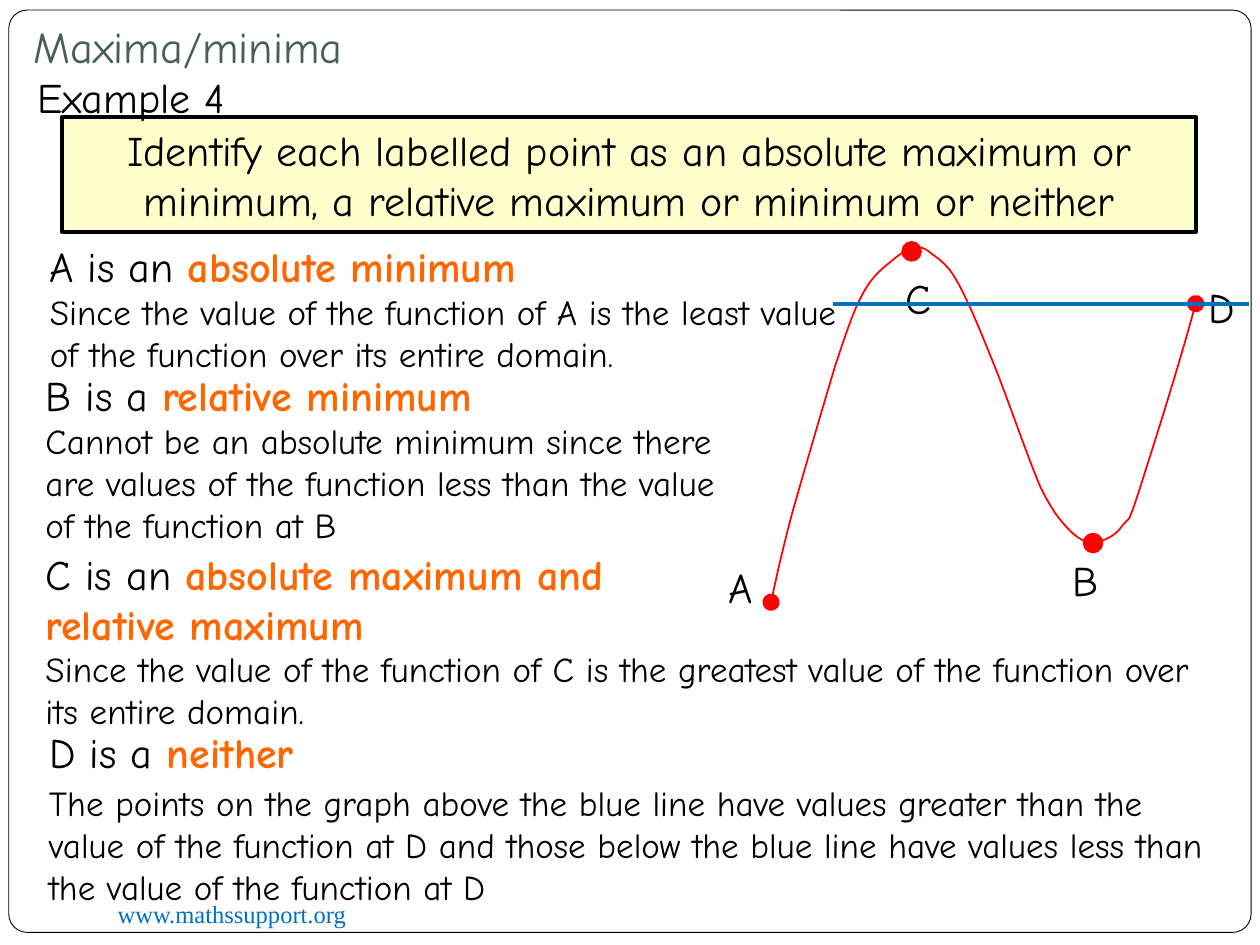
from dataclasses import dataclass

from lxml import etree
from pptx import Presentation
from pptx import util as u
from pptx.dml.color import RGBColor
from pptx.enum import shapes, text
from pptx.oxml import ns

SLIDE_WIDTH, SLIDE_HEIGHT = u.Inches(10), u.Inches(7.5)
COLUMNS, ROWS = 100, 75


@dataclass(frozen=True)
class Theme:
    font: str = "Comic Neue"
    site_font: str = "Times New Roman"
    title_size: float = 25.2
    heading_size: float = 24
    reason_size: float = 20
    site_size: float = 14
    ink: str = "000000"
    paper: str = "FFFFFF"
    title: str = "455F51"
    task: str = "FFFFCC"
    answer: str = "FF6600"
    curve: str = "FF0000"
    level: str = "0070C0"


THEME = Theme()

CONCLUSIONS = [
    ("A is an ", "absolute minimum", (2.95, 18.6, 41.7, 5),
     "Since the value of the function of A is the least value of the function "
     "over its entire domain.", (2.97, 22.55, 65.5, 7.7)),
    ("B is a ", "relative minimum", (2.63, 28.8, 45.8, 5),
     "Cannot be an absolute minimum since there are values of the function "
     "less than the value of the function at B", (2.63, 32.8, 57.6, 11.1)),
    ("C is an ", "absolute maximum and relative maximum", (2.63, 43, 50.5, 9.1),
     "Since the value of the function of C is the greatest value of the function "
     "over its entire domain.", (2.63, 50.9, 94.7, 7.7)),
    ("D is a ", "neither", (2.95, 57.2, 23.4, 5),
     "The points on the graph above the blue line have values greater than the "
     "value of the function at D and those below the blue line have values less "
     "than the value of the function at D", (2.9, 61.5, 94.5, 11.1)),
]

POINT_LABELS = {"A": (56.8, 44.1), "C": (70.9, 21.1), "B": (84.1, 43.5), "D": (94.9, 21.85)}
TURNING_POINTS = [(86.75, 43.1), (72.35, 19.95)]

CURVE_START = (94.9, 24.1)
CURVE_SEGMENTS = [
    ((93.3, 30), (91.3, 36.1), (90.4, 39)),
    ((89.4, 42), (89.7, 40.9), (89.1, 41.7)),
    ((88.5, 42.6), (87.5, 43), (86.8, 43)),
    ((86.1, 43.1), (85.5, 42.7), (84.8, 42)),
    ((84.2, 41.3), (83.7, 40.9), (82.6, 38.7)),
    ((81.6, 36.4), (79.9, 31.4), (78.8, 28.7)),
    ((77.7, 26), (76.8, 23.8), (76, 22.4)),
    ((75.2, 20.9), (74.4, 20.5), (73.9, 20.1)),
    ((73.3, 19.6), (73.1, 19.6), (72.6, 19.7)),
    ((72.1, 19.8), (71.6, 20), (70.9, 20.6)),
    ((70.2, 21.2), (69.4, 21.7), (68.6, 23.1)),
    ((67.8, 24.5), (67.3, 26), (66.3, 29)),
    ((65.4, 32), (63.7, 37.8), (62.8, 41)),
    ((62, 44.1), (61.6, 45.9), (61.2, 47.8)),
]


def across(columns):
    return round(SLIDE_WIDTH * columns / COLUMNS)


def down(rows):
    return round(SLIDE_HEIGHT * rows / ROWS)


def place(left, top, width, height):
    return across(left), down(top), across(width), down(height)


def colour(value):
    return RGBColor.from_string(value)


def write(frame, pieces, size, font=THEME.font, align=text.PP_ALIGN.LEFT):
    frame.word_wrap = True
    paragraph = frame.paragraphs[0]
    paragraph.alignment = align
    paragraph.font.name = font
    paragraph.font.size = u.Pt(size)
    for words, ink, bold in pieces:
        run = paragraph.add_run()
        run.text = words
        run.font.color.rgb = colour(ink)
        run.font.bold = bold


def add_text(slide, area, pieces, size, font=THEME.font):
    box = slide.shapes.add_textbox(*place(*area))
    write(box.text_frame, pieces, size, font)
    return box


def add_panel(slide, kind, area, fill, line, width):
    panel = slide.shapes.add_shape(kind, *place(*area))
    panel.shadow.inherit = False
    panel.fill.solid()
    panel.fill.fore_color.rgb = colour(fill)
    panel.line.color.rgb = colour(line)
    panel.line.width = u.Pt(width)
    return panel


def move_to_master(master, part):
    number = max(shape.shape_id for shape in master.shapes) + 1
    part._element.nvSpPr.cNvPr.set("id", str(number))
    master.shapes._spTree.append(part._element)


def add_master_parts(slide, master):
    border = add_panel(slide, shapes.MSO_SHAPE.ROUNDED_RECTANGLE, (0.7, 0.8, 98.6, 73.2),
                       THEME.paper, THEME.ink, 0.5)
    border.adjustments[0] = 0.02
    site = add_text(slide, (8.35, 70.85, 32.5, 3.4),
                    [("www.mathssupport.org", THEME.level, False)],
                    THEME.site_size, THEME.site_font)
    for part in (border, site):
        move_to_master(master, part)


def add_title(slide, words):
    title = slide.shapes.title
    slide.shapes._spTree.append(title._element)
    title.left, title.top, title.width, title.height = place(1.65, 1.25, 90, 5.5)
    frame = title.text_frame
    frame.auto_size = text.MSO_AUTO_SIZE.NONE
    frame.vertical_anchor = text.MSO_ANCHOR.BOTTOM
    frame.margin_bottom = u.Inches(0.1)
    write(frame, [(words, THEME.title, False)], THEME.title_size)


def bend_lines(shape):
    lines = list(shape._element.iter(ns.qn("a:lnTo")))
    for first, second, end in zip(lines[::3], lines[1::3], lines[2::3]):
        first.tag = ns.qn("a:cubicBezTo")
        for line in (second, end):
            first.append(line[0])
            line.getparent().remove(line)


def add_curve(slide):
    builder = slide.shapes.build_freeform(across(CURVE_START[0]), down(CURVE_START[1]))
    builder.add_line_segments(
        [(across(x), down(y)) for segment in CURVE_SEGMENTS for x, y in segment], close=False)
    curve = builder.convert_to_shape()
    bend_lines(curve)
    curve.shadow.inherit = False
    curve.fill.background()
    curve.line.color.rgb = colour(THEME.curve)
    curve.line.width = u.Pt(1)
    outline = curve.line._get_or_add_ln()
    for end in ("a:headEnd", "a:tailEnd"):
        etree.SubElement(outline, ns.qn(end), type="oval", w="lg", len="lg")


def add_level_line(slide):
    line = slide.shapes.add_connector(
        shapes.MSO_CONNECTOR.STRAIGHT, across(99.1), down(24.1), across(66.1), down(24.1))
    line.line.color.rgb = colour(THEME.level)
    line.line.width = u.Pt(2.25)
    etree.SubElement(line._element.spPr, ns.qn("a:effectLst"))


def add_graph(slide):
    add_curve(slide)
    for name, corner in POINT_LABELS.items():
        add_text(slide, (*corner, 4.5, 5), [(name, THEME.ink, False)], THEME.heading_size)
    for x, y in TURNING_POINTS:
        add_panel(slide, shapes.MSO_SHAPE.OVAL, (x - 0.75, y - 0.75, 1.5, 1.5),
                  THEME.curve, THEME.curve, 1)


def add_conclusion(slide, lead, answer, heading_area, reason, reason_area):
    add_text(slide, heading_area,
             [(lead, THEME.ink, False), (answer, THEME.answer, True)], THEME.heading_size)
    add_text(slide, reason_area, [(reason, THEME.ink, False)], THEME.reason_size)


def main():
    deck = Presentation()
    deck.slide_width, deck.slide_height = SLIDE_WIDTH, SLIDE_HEIGHT
    slide = deck.slides.add_slide(deck.slide_layouts[5])
    add_master_parts(slide, deck.slide_master)

    task = add_panel(slide, shapes.MSO_SHAPE.RECTANGLE, (4.93, 9.3, 90, 9.1),
                     THEME.task, THEME.ink, 2.25)
    write(task.text_frame,
          [("Identify each labelled point as an absolute maximum or minimum, "
            "a relative maximum or minimum or neither", THEME.ink, False)],
          THEME.heading_size, align=text.PP_ALIGN.CENTER)

    add_graph(slide)
    for conclusion in CONCLUSIONS:
        add_conclusion(slide, *conclusion)
    add_level_line(slide)
    add_text(slide, (2, 5.2, 18.1, 5), [("Example 4", THEME.ink, False)], THEME.heading_size)
    add_title(slide, "Maxima/minima")
    deck.save("out.pptx")


if __name__ == "__main__":
    main()
